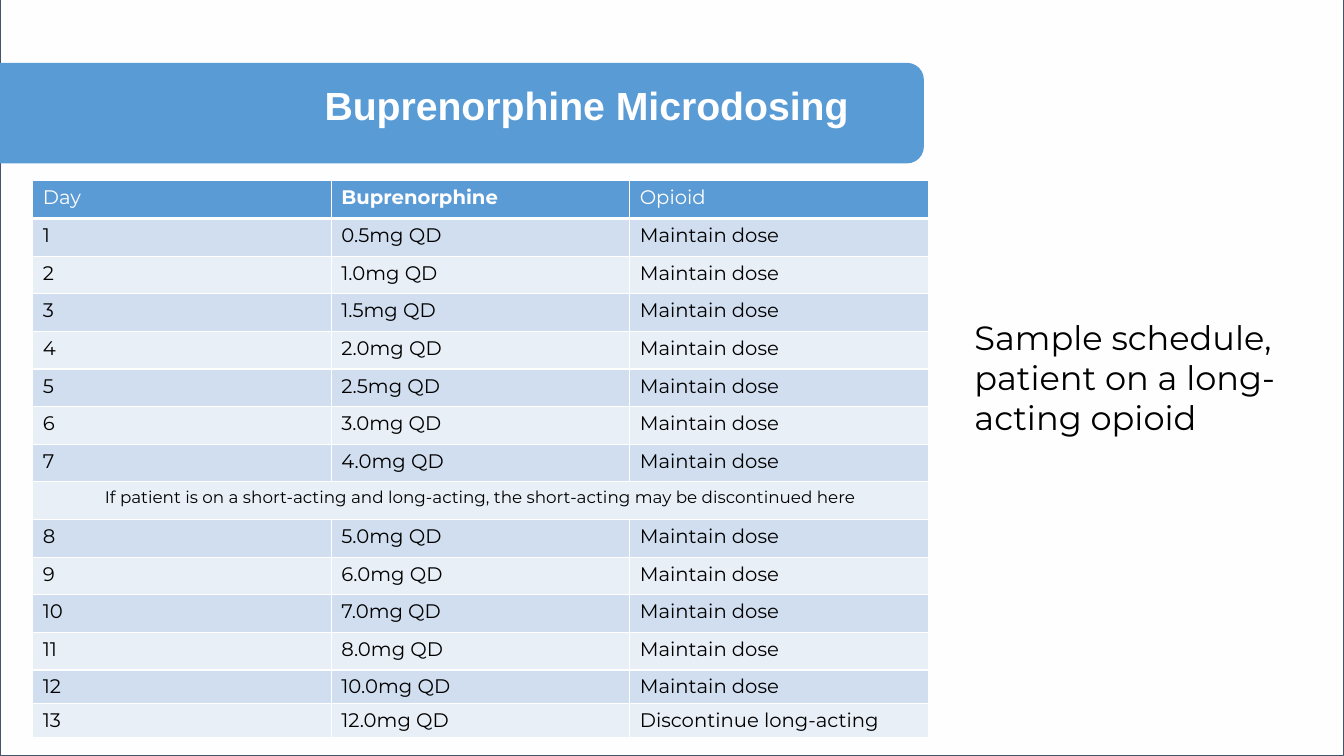
from dataclasses import dataclass

from lxml.etree import SubElement
from pptx import Presentation
from pptx.dml.color import RGBColor
from pptx.enum.shapes import MSO_SHAPE as Shape
from pptx.enum.text import MSO_ANCHOR as Anchor, MSO_AUTO_SIZE as AutoSize, PP_ALIGN as Align
from pptx.oxml.ns import qn
from pptx.util import Pt


@dataclass(frozen=True)
class Theme:
    panel: str = "FEFEFE"
    outline: str = "44546A"
    banner: str = "599BD5"
    header: str = "5B9BD5"
    bands: tuple = ("D0DEEF", "E9EFF7")
    white: str = "FFFFFF"
    black: str = "000000"
    title_font: str = "Arial"
    body_font: str = "Montserrat"
    title_size: int = 28
    caption_size: int = 24
    cell_size: int = 14
    note_size: int = 12


THEME = Theme()
SLIDE_BOX = (0, 0, 960, 540)
BANNER_BOX = (0, 44.9, 659.9, 71.8)
TITLE_BOX = (224.6, 54.7, 671.8, 109.4)
CAPTION_BOX = (689, 222.5, 247.7, 211)
TABLE_BOX = (23.4, 129.2, 639.6, 396.9)
SHORT_ROW = 23.6

HEADINGS = ("Day", "Buprenorphine", "Opioid")
DOSES = ("0.5", "1.0", "1.5", "2.0", "2.5", "3.0", "4.0",
         "5.0", "6.0", "7.0", "8.0", "10.0", "12.0")
NOTE = ("If patient is on a short-acting and long-acting, "
        "the short-acting may be discontinued here")
NOTE_ROW = 8


def points(box):
    return [Pt(length) for length in box]


def write(frame, text, *, size, color=THEME.black, font=THEME.body_font,
          bold=False, align=Align.LEFT):
    frame.word_wrap = True
    paragraph = frame.paragraphs[0]
    paragraph.text = text
    paragraph.alignment = align
    style = paragraph.runs[0].font
    style.name, style.size, style.bold = font, Pt(size), bold
    style.color.rgb = RGBColor.from_string(color)


def add_panel(slide, kind, box, fill, line=None):
    shape = slide.shapes.add_shape(kind, *points(box))
    shape.shadow.inherit = False
    shape.fill.solid()
    shape.fill.fore_color.rgb = RGBColor.from_string(fill)
    if line:
        shape.line.color.rgb = RGBColor.from_string(line)
        shape.line.width = Pt(0.75)
    else:
        shape.line.fill.background()
    return shape


def add_banner(slide, box):
    """Draw the banner as an upright shape turned a quarter, so its right corners are round."""
    left, top, width, height = box
    shift = (width - height) / 2
    upright = (left + shift, top - shift, height, width)
    banner = add_panel(slide, Shape.ROUND_2_SAME_RECTANGLE, upright, THEME.banner)
    banner.rotation = 90


def add_title(slide, box, text):
    title = slide.shapes.title
    title.left, title.top, title.width, title.height = points(box)
    frame = title.text_frame
    frame.auto_size = AutoSize.NONE
    frame.vertical_anchor = Anchor.TOP
    write(frame, text, size=THEME.title_size, color=THEME.white,
          font=THEME.title_font, bold=True)
    slide.shapes.element.append(title.element)  # bring in front of the banner


def add_caption(slide, box, text):
    caption = slide.shapes.add_textbox(*points(box))
    write(caption.text_frame, text, size=THEME.caption_size)


def paint_cell(cell, fill, top_width, bottom_width):
    properties = cell._tc.get_or_add_tcPr()
    for side, width in (("L", 1), ("R", 1), ("T", top_width), ("B", bottom_width)):
        line = SubElement(properties, qn(f"a:ln{side}"), w=str(Pt(width)))
        solid = SubElement(line, qn("a:solidFill"))
        SubElement(solid, qn("a:srgbClr"), val=THEME.white)
    cell.fill.solid()
    cell.fill.fore_color.rgb = RGBColor.from_string(fill)


def schedule_rows():
    rows = [(str(day), f"{dose}mg QD", "Maintain dose")
            for day, dose in enumerate(DOSES, start=1)]
    rows[-1] = (*rows[-1][:2], "Discontinue long-acting")
    rows.insert(NOTE_ROW - 1, (NOTE,))
    return [HEADINGS, *rows]


def add_schedule(slide, box):
    rows = schedule_rows()
    count = len(rows)
    table = slide.shapes.add_table(count, len(HEADINGS), *points(box)).table
    for column in table.columns:
        column.width = Pt(box[2] / len(HEADINGS))
    tall_row = (box[3] - 2 * SHORT_ROW) / (count - 2)
    table.cell(NOTE_ROW, 0).merge(table.cell(NOTE_ROW, len(HEADINGS) - 1))

    for index, values in enumerate(rows):
        table.rows[index].height = Pt(SHORT_ROW if index >= count - 2 else tall_row)
        is_header, is_note = index == 0, index == NOTE_ROW
        fill = THEME.header if is_header else THEME.bands[(index - 1) % 2]
        for cell in table.rows[index].cells:
            paint_cell(cell, fill, 3 if index == 1 else 1, 3 if is_header else 1)
        for column, value in enumerate(values):
            write(table.cell(index, column).text_frame, value,
                  size=THEME.note_size if is_note else THEME.cell_size,
                  color=THEME.white if is_header else THEME.black,
                  bold=is_header and column == 1,
                  align=Align.CENTER if is_note else Align.LEFT)


def main():
    presentation = Presentation()
    presentation.slide_width, presentation.slide_height = points(SLIDE_BOX[2:])
    slide = presentation.slides.add_slide(presentation.slide_layouts[5])
    add_panel(slide, Shape.RECTANGLE, SLIDE_BOX, THEME.panel, THEME.outline)
    add_banner(slide, BANNER_BOX)
    add_title(slide, TITLE_BOX, "Buprenorphine Microdosing")
    add_caption(slide, CAPTION_BOX, "Sample schedule, patient on a long-acting opioid")
    add_schedule(slide, TABLE_BOX)
    presentation.save("out.pptx")


if __name__ == "__main__":
    main()
